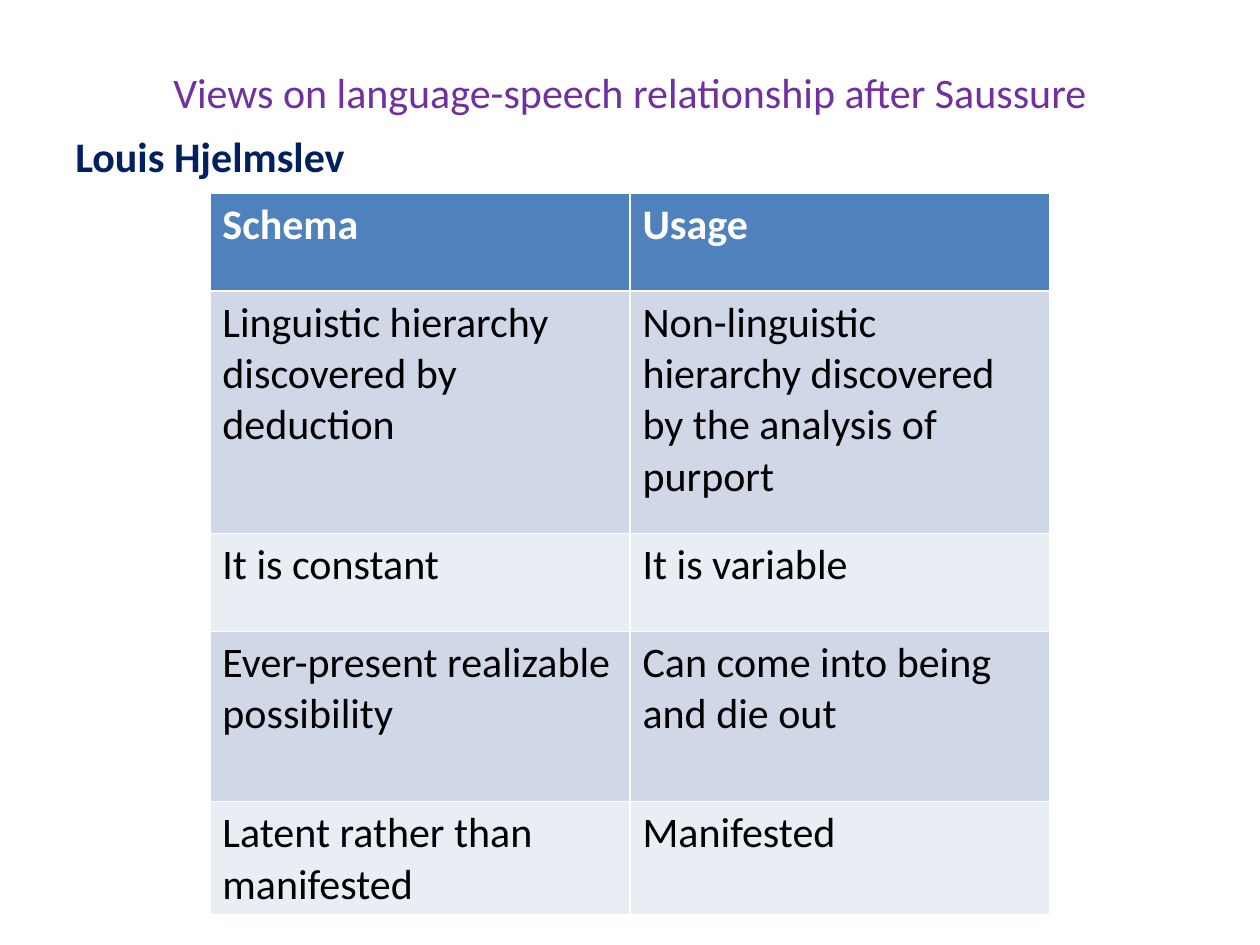
"""Build a slide comparing Hjelmslev's schema and usage in a table."""
import pptx
import pptx.dml.color
import pptx.enum.text
import pptx.util

Cm, Pt = pptx.util.Cm, pptx.util.Pt
RGBColor = pptx.dml.color.RGBColor
PP_ALIGN = pptx.enum.text.PP_ALIGN
MSO_ANCHOR = pptx.enum.text.MSO_ANCHOR

TITLE = "Views on language-speech relationship after Saussure"
LINGUIST = "Louis Hjelmslev"
COMPARISON = [
    ("Schema", "Usage"),
    ("Linguistic hierarchy discovered by deduction",
     "Non-linguistic hierarchy discovered by the analysis of purport"),
    ("It is constant", "It is variable"),
    ("Ever-present realizable possibility", "Can come into being and die out"),
    ("Latent rather than manifested", "Manifested"),
]
ROW_HEIGHTS = [1.98, 4.88, 1.98, 3.43, 1.98]
COLUMN_WIDTH = 8.47

PURPLE = RGBColor(0x70, 0x30, 0xA0)
NAVY = RGBColor(0x00, 0x20, 0x60)
WHITE = RGBColor(0xFF, 0xFF, 0xFF)
BLACK = RGBColor(0x00, 0x00, 0x00)
HEADER_BLUE = RGBColor(0x4F, 0x81, 0xBD)
BANDS = [RGBColor(0xE9, 0xED, 0xF4), RGBColor(0xD0, 0xD8, 0xE8)]


def write(frame, text, color, bold=False):
    frame.text = text
    frame.word_wrap = True
    line = frame.paragraphs[0]
    font = line.runs[0].font
    font.name, font.size, font.bold = "Calibri", Pt(24), bold
    font.color.rgb = color
    return line


def add_text(slide, top, height, text, color, bold=False):
    frame = slide.shapes.add_textbox(Cm(1.27), Cm(top), Cm(22.86), Cm(height)).text_frame
    return frame, write(frame, text, color, bold)


def add_comparison(slide):
    columns = len(COMPARISON[0])
    width = columns * COLUMN_WIDTH
    table = slide.shapes.add_table(
        len(COMPARISON), columns, Cm((25.4 - width) / 2), Cm(3.89),
        Cm(width), Cm(sum(ROW_HEIGHTS))).table
    for column in table.columns:
        column.width = Cm(COLUMN_WIDTH)
    for r, (entries, height) in enumerate(zip(COMPARISON, ROW_HEIGHTS)):
        table.rows[r].height = Cm(height)
        header = r == 0
        for c, entry in enumerate(entries):
            cell = table.cell(r, c)
            cell.fill.solid()
            cell.fill.fore_color.rgb = HEADER_BLUE if header else BANDS[r % 2]
            write(cell.text_frame, entry, WHITE if header else BLACK, header)


def main():
    deck = pptx.Presentation()
    deck.slide_width, deck.slide_height = Cm(25.4), Cm(19.05)
    slide = deck.slides.add_slide(deck.slide_layouts[6])

    title_frame, title = add_text(slide, 0.76, 2.16, TITLE, PURPLE)
    title_frame.vertical_anchor = MSO_ANCHOR.MIDDLE
    title.alignment = PP_ALIGN.CENTER

    _, linguist = add_text(slide, 2.51, 15.39, LINGUIST, NAVY, True)
    linguist.space_before = Pt(4.8)

    add_comparison(slide)
    deck.save("out.pptx")


if __name__ == "__main__":
    main()
